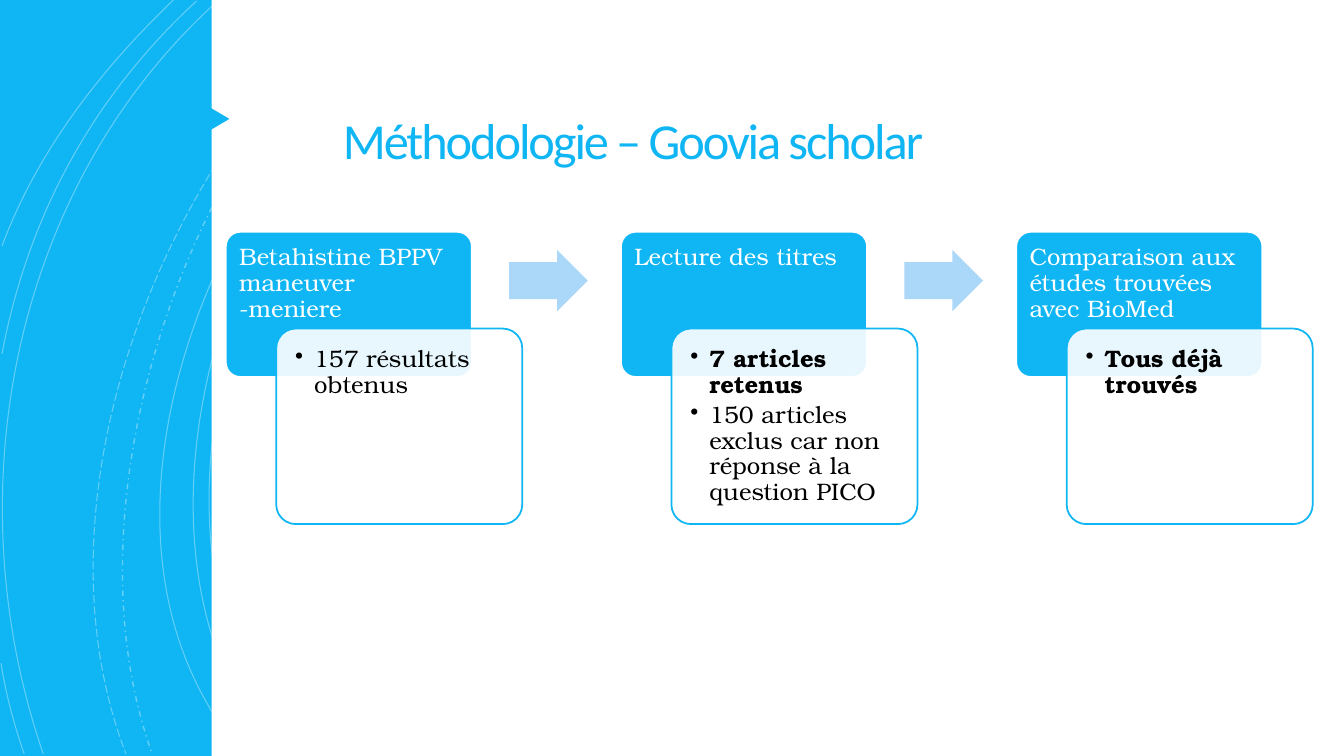
from dataclasses import dataclass

from lxml.etree import SubElement
from pptx import Presentation
from pptx.dml.color import RGBColor
from pptx.enum.dml import MSO_LINE
from pptx.enum.shapes import MSO_SHAPE
from pptx.enum.text import MSO_ANCHOR, PP_ALIGN
from pptx.oxml.ns import qn
from pptx.util import Pt

PX = 9144  # EMU per px, 100 px to the inch
SLIDE_WIDTH, SLIDE_HEIGHT = 1333, 750


@dataclass(frozen=True)
class Theme:
    accent: RGBColor = RGBColor(0x10, 0xB6, 0xF4)
    arrow: RGBColor = RGBColor(0xAB, 0xD7, 0xF8)
    paper: RGBColor = RGBColor(0xFF, 0xFF, 0xFF)
    ink: RGBColor = RGBColor(0x00, 0x00, 0x00)
    title_font: str = "Calibri"
    body_font: str = "TeX Gyre Bonum"
    title_size: Pt = Pt(36)
    body_size: Pt = Pt(17)
    border: Pt = Pt(1.25)
    hairline: Pt = Pt(0.75)


# Start, two control points and end of each curve, with its dash style
ARCS = [
    ((464, 0), (244, 133), (110, 541), (294, 748), MSO_LINE.SOLID),
    ((451, 0), (231, 138), (97, 533), (272, 748), MSO_LINE.SOLID),
    ((427, 0), (217, 147), (53, 529), (241, 748), MSO_LINE.SOLID),
    ((363, 0), (176, 166), (65, 509), (151, 748), MSO_LINE.DASH_DOT),
    ((351, 0), (157, 169), (29, 499), (125, 748), MSO_LINE.LONG_DASH),
    ((217, 0), (11, 185), (-46, 490), (43, 748), MSO_LINE.SOLID),
    ((195, 1), (92, 96), (28, 214), (2, 351), MSO_LINE.SOLID),
    ((1, 658), (6, 689), (14, 719), (24, 748), MSO_LINE.SOLID),
    ((172, 0), (100, 69), (37, 150), (2, 244), MSO_LINE.SOLID),
]

# Step heading, then its findings as (text, bold)
STEPS = [
    ("Betahistine BPPV maneuver -meniere", [("157 résultats obtenus", False)]),
    ("Lecture des titres", [
        ("7 articles retenus", True),
        ("150 articles exclus car non réponse à la question PICO", False),
    ]),
    ("Comparaison aux études trouvées avec BioMed", [("Tous déjà trouvés", True)]),
]
FIRST_STEP, STEP_PITCH = 224, 392


def set_opacity(fill, percent):
    color = next(fill.iter(qn("a:srgbClr")))
    SubElement(color, qn("a:alpha")).set("val", str(percent * 1000))


class SlideBuilder:
    def __init__(self, slide, theme):
        self.shapes = slide.shapes
        self.theme = theme

    def block(self, kind, box, fill, border=None, adjust=()):
        block = self.shapes.add_shape(kind, *(length * PX for length in box))
        block.shadow.inherit = False
        block.fill.solid()
        block.fill.fore_color.rgb = fill
        if border is None:
            block.line.fill.background()
        else:
            block.line.color.rgb = border
            block.line.width = self.theme.border
        for index, value in enumerate(adjust):
            block.adjustments[index] = value
        return block

    def arc(self, start, control_1, control_2, end, dash):
        """Draw one translucent cubic curve."""
        builder = self.shapes.build_freeform(*start, scale=PX)
        builder.add_line_segments([control_1, control_2, end], close=False)
        arc = builder.convert_to_shape()
        outline = next(arc.element.iter(qn("a:path")))
        segments = outline.findall(qn("a:lnTo"))
        curve = SubElement(outline, qn("a:cubicBezTo"))
        for segment in segments:
            curve.append(segment[0])
            outline.remove(segment)
        arc.shadow.inherit = False
        arc.fill.background()
        arc.line.color.rgb = self.theme.paper
        arc.line.width = Pt(1) if dash == MSO_LINE.DASH_DOT else self.theme.hairline
        arc.line.dash_style = dash
        set_opacity(arc.element.spPr.find(qn("a:ln")), 35)

    def frame(self, shape, inset, bottom=None):
        """Prepare a top-anchored, wrapping text frame."""
        frame = shape.text_frame
        frame.word_wrap = True
        frame.vertical_anchor = MSO_ANCHOR.TOP
        frame.margin_left = frame.margin_right = frame.margin_top = inset * PX
        frame.margin_bottom = (inset if bottom is None else bottom) * PX
        return frame

    def set_text(self, paragraph, text, font, size, color, bold=False, spacing=0.9):
        paragraph.text = text
        paragraph.alignment = PP_ALIGN.LEFT
        paragraph.line_spacing = spacing
        paragraph.font.name = font
        paragraph.font.size = size
        paragraph.font.bold = bold
        paragraph.font.color.rgb = color

    def title(self, text, box):
        title = self.shapes.add_textbox(*(length * PX for length in box))
        paragraph = self.frame(title, 25).paragraphs[0]
        self.set_text(paragraph, text, self.theme.title_font, self.theme.title_size,
                      self.theme.accent, spacing=0.85)
        paragraph.runs[0].font._element.set("spc", "-150")

    def heading(self, text, left):
        theme = self.theme
        card = self.block(MSO_SHAPE.ROUNDED_RECTANGLE, (left, 230, 244, 144),
                          theme.accent, theme.paper, (0.1,))
        self.set_text(self.frame(card, 9, 3).paragraphs[0], text,
                      theme.body_font, theme.body_size, theme.paper)

    def findings(self, items, left):
        theme = self.theme
        card = self.block(MSO_SHAPE.ROUNDED_RECTANGLE, (left, 326, 244, 194),
                          theme.paper, theme.accent, (0.1,))
        set_opacity(card.element.spPr.find(qn("a:solidFill")), 90)
        frame = self.frame(card, 13)
        for index, (text, bold) in enumerate(items):
            paragraph = frame.add_paragraph() if index else frame.paragraphs[0]
            self.set_text(paragraph, text, theme.body_font, theme.body_size, theme.ink, bold)
            paragraph.space_after = Pt(3)
            self.bullet(paragraph, 19)

    def bullet(self, paragraph, indent):
        properties = paragraph._p.get_or_add_pPr()
        properties.set("marL", str(indent * PX))
        properties.set("indent", str(-indent * PX))
        mark = properties.makeelement(qn("a:buChar"), {"char": "•"})
        properties.find(qn("a:defRPr")).addprevious(mark)


def main():
    presentation = Presentation()
    presentation.slide_width = SLIDE_WIDTH * PX
    presentation.slide_height = SLIDE_HEIGHT * PX
    theme = Theme()
    builder = SlideBuilder(
        presentation.slides.add_slide(presentation.slide_layouts[6]), theme)

    builder.block(MSO_SHAPE.RECTANGLE, (0, 0, SLIDE_WIDTH, SLIDE_HEIGHT), theme.accent)
    for arc in ARCS:
        builder.arc(*arc)
    builder.block(MSO_SHAPE.RECTANGLE, (210, 0, SLIDE_WIDTH - 210, SLIDE_HEIGHT), theme.paper)
    builder.title("Méthodologie – Goovia scholar", (315, 92, 681, 135))
    pointer = builder.block(MSO_SHAPE.ISOSCELES_TRIANGLE, (197, 104, 33, 28), theme.accent)
    pointer.rotation = 90

    for index, (heading, items) in enumerate(STEPS):
        left = FIRST_STEP + index * STEP_PITCH
        builder.heading(heading, left)
        builder.findings(items, left + 50)
        if index < len(STEPS) - 1:
            builder.block(MSO_SHAPE.RIGHT_ARROW, (left + 281, 248, 78, 61),
                          theme.arrow, adjust=(0.6, 0.5))

    presentation.save("out.pptx")


if __name__ == "__main__":
    main()
